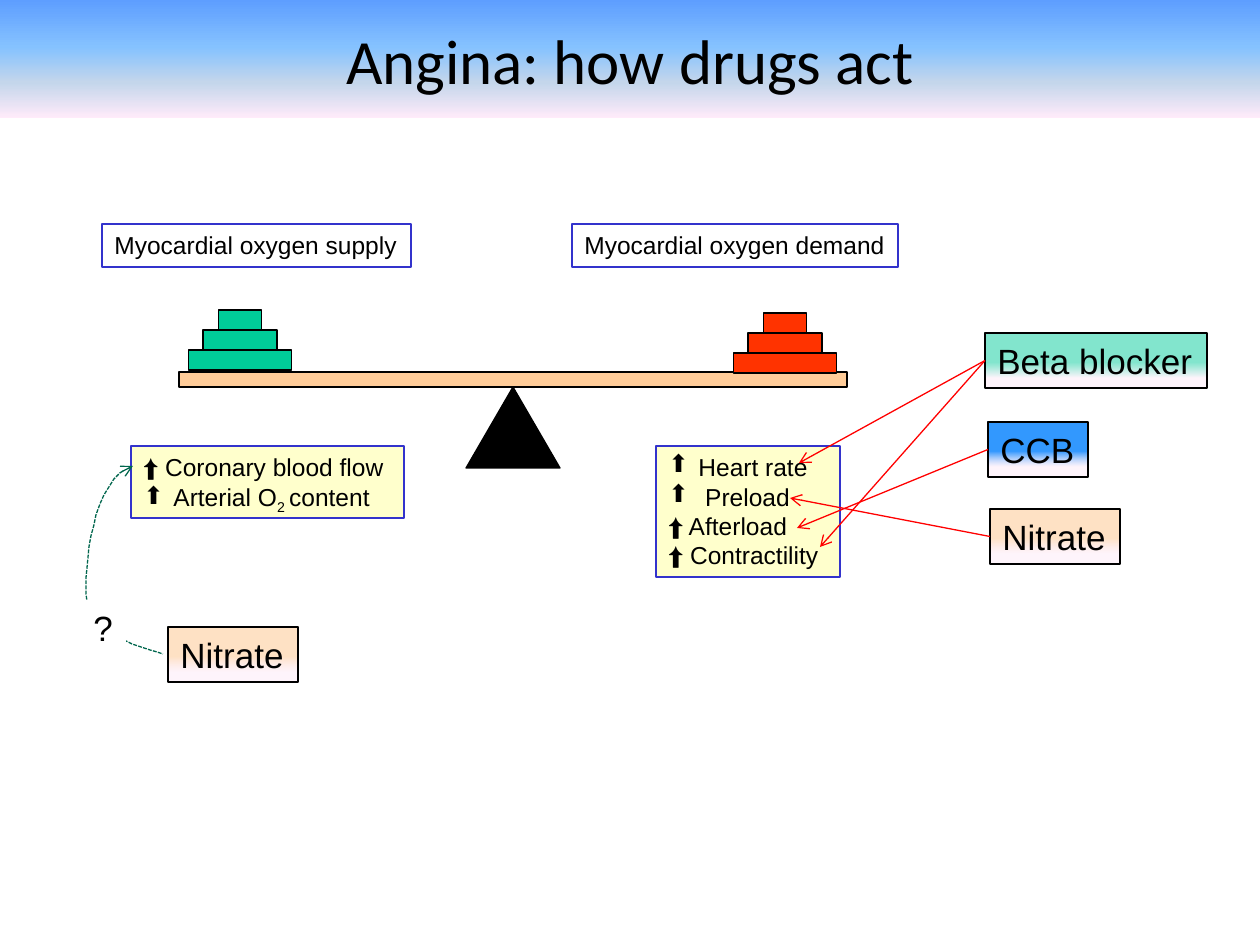
from pptx import Presentation
from pptx.dml.color import RGBColor
from pptx.enum.dml import MSO_LINE
from pptx.enum.shapes import MSO_CONNECTOR, MSO_SHAPE
from pptx.enum.text import MSO_ANCHOR, MSO_AUTO_SIZE, PP_ALIGN
from pptx.oxml.ns import qn
from pptx.util import Pt
from lxml import etree

PX = 914400 / 126
RECT, TRI = MSO_SHAPE.RECTANGLE, MSO_SHAPE.ISOSCELES_TRIANGLE
STRAIGHT, DASH = MSO_CONNECTOR.STRAIGHT, MSO_LINE.SQUARE_DOT
GROW, MIDDLE, CENTER = MSO_AUTO_SIZE.SHAPE_TO_FIT_TEXT, MSO_ANCHOR.MIDDLE, PP_ALIGN.CENTER
LEFT_SIDE = 1

BLACK = RGBColor(0x00, 0x00, 0x00)
WHITE = RGBColor(0xFF, 0xFF, 0xFF)
BLUE = RGBColor(0x33, 0x33, 0xCC)
SKY = RGBColor(0x33, 0x99, 0xFF)
GREEN = RGBColor(0x00, 0xCC, 0x99)
PINE = RGBColor(0x00, 0x66, 0x4D)
RED = RGBColor(0xFF, 0x00, 0x00)
BRICK = RGBColor(0xFF, 0x33, 0x00)
WOOD = RGBColor(0xFF, 0xCC, 0x99)
PEACH = RGBColor(0xFF, 0xE2, 0xC5)
CREAM = RGBColor(0xFF, 0xFF, 0xCC)
PINK = RGBColor(0xFF, 0xEB, 0xFA)
BANNER = [(0, RGBColor(0x5E, 0x9E, 0xFF), 100), (40, RGBColor(0x85, 0xC2, 0xFF), 100),
          (70, RGBColor(0xC4, 0xD6, 0xEB), 100), (100, PINK, 100)]


def emu(*vals):
    return [round(v * PX) for v in vals]


def add(node, tag, **attrs):
    return etree.SubElement(node, qn(tag), attrs)


def fade(tint, alpha=100):
    return [(54, tint, alpha), (82, PINK, 50)]


class Deck:
    def __init__(self, wide, high):
        self.prs = Presentation()
        self.prs.slide_width, self.prs.slide_height = emu(wide, high)
        self.slide = self.prs.slides.add_slide(self.prs.slide_layouts[5])
        self.shapes = self.slide.shapes

    def paint(self, shape, fill, line=None, width=0.75):
        if isinstance(fill, list):
            self.blend(shape, fill)
        elif fill is None:
            shape.fill.background()
        else:
            shape.fill.solid()
            shape.fill.fore_color.rgb = fill
        if line is None:
            shape.line.fill.background()
        else:
            shape.line.color.rgb = line
            shape.line.width = Pt(width)

    def blend(self, shape, stops):
        shape.fill.gradient()
        shape.fill.gradient_angle = 270
        group = next(shape._element.iter(qn("a:gsLst")))
        for old in list(group):
            group.remove(old)
        for pos, tint, alpha in stops:
            stop = add(group, "a:gs", pos=str(pos * 1000))
            color = add(stop, "a:srgbClr", val=str(tint))
            if alpha < 100:
                add(color, "a:alpha", val=str(alpha * 1000))

    def style(self, font, **form):
        font.color.rgb = BLACK
        for key, val in form.items():
            setattr(font, key, val)

    def title(self, text, box):
        shape = self.shapes.title
        for key, val in zip(("left", "top", "width", "height"), emu(*box)):
            setattr(shape, key, val)
        self.paint(shape, BANNER)
        frame = shape.text_frame
        frame.text = text
        frame.vertical_anchor = MIDDLE
        para = frame.paragraphs[0]
        para.alignment = CENTER
        self.style(para.runs[0].font, name="Calibri", size=Pt(36))

    def block(self, kind, box, fill):
        shape = self.shapes.add_shape(kind, *emu(*box))
        shape.shadow.inherit = False
        self.paint(shape, fill, BLACK)

    def pile(self, mid, base, fill):
        for step, wide in enumerate((103, 74, 43)):
            self.block(RECT, (mid - wide / 2, base - 20 * (step + 1), wide, 20), fill)

    def label(self, box, lines, size, fill, line=BLUE, width=0.75):
        """Each line is (bullet or None, list of (text, baseline))."""
        shape = self.shapes.add_textbox(*emu(*box))
        self.paint(shape, fill, line, width)
        frame = shape.text_frame
        frame.word_wrap = False
        frame.auto_size = GROW
        for num, (mark, runs) in enumerate(lines):
            para = frame.add_paragraph() if num else frame.paragraphs[0]
            if mark:
                self.bullet(para, mark)
            for text, base in runs:
                run = para.add_run()
                run.text = text
                self.style(run.font, name="Arial", size=Pt(size))
                if base:
                    run._r.get_or_add_rPr().set("baseline", str(base * 1000))
        return shape

    def bullet(self, para, mark):
        props = para._p.get_or_add_pPr()
        gap = emu(30)[0]
        props.set("marL", str(gap))
        props.set("indent", str(-gap))
        add(props, "a:buChar", char=mark)

    def drug(self, box, name, fill):
        return self.label(box, [(None, [(name, 0)])], 20, fill, BLACK)

    def arrow(self, source, end):
        start = (source.left, source.top + source.height // 2)
        link = self.shapes.add_connector(STRAIGHT, *start, *emu(*end))
        link.begin_connect(source, LEFT_SIDE)
        link.line.color.rgb = RED
        link.line.width = Pt(0.75)
        add(link.line._get_or_add_ln(), "a:tailEnd", type="arrow")
        add(link._element.spPr, "a:effectLst")

    def curve(self, start, parts, steps=16):
        pts, here = [], start
        for one, two, end in parts:
            for num in range(1, steps + 1):
                t = num / steps
                u = 1 - t
                pts.append(tuple(u**3 * a + 3 * u * u * t * b + 3 * u * t * t * c + t**3 * d
                                 for a, b, c, d in zip(here, one, two, end)))
            here = end
        form = self.shapes.build_freeform(*start, scale=PX)
        form.add_line_segments(pts, close=False)
        shape = form.convert_to_shape()
        shape.shadow.inherit = False
        self.paint(shape, None, PINE)
        shape.line.dash_style = DASH
        add(shape.line._get_or_add_ln(), "a:headEnd", type="arrow")


def main():
    deck = Deck(1260, 945)
    deck.title("Angina: how drugs act", (0, 0, 1260, 118))

    # Balance: beam, pivot and weights
    deck.block(RECT, (179, 372, 668, 15), WOOD)
    deck.block(TRI, (466, 387, 94, 81), BLACK)
    deck.pile(240, 370, GREEN)
    deck.pile(785, 373, BRICK)

    # Headings of the two sides
    for left, wide, side in ((102, 309, "supply"), (572, 326, "demand")):
        deck.label((left, 224, wide, 43), [(None, [("Myocardial oxygen " + side, 0)])], 14, WHITE)

    # Factors on each side
    deck.label((131, 446, 273, 72), [
        (None, [("⬆ Coronary blood flow", 0)]),
        ("⬆", [("Arterial O", 0), ("2 ", -25), ("content", 0)]),
    ], 14, CREAM)
    deck.label((656, 446, 184, 131), [
        ("⬆", [("Heart rate", 0)]),
        ("⬆", [(" Preload", 0)]),
        (None, [("⬆ Afterload", 0)]),
        (None, [("⬆ Contractility", 0)]),
    ], 14, CREAM, width=1)

    # Drugs and the factors they act on
    for box, name, fill, ends in (
        ((985, 333, 222, 55), "Beta blocker", fade(GREEN, 49), [(799, 463), (820, 547)]),
        ((988, 422, 100, 55), "CCB", fade(SKY), [(797, 528)]),
        ((990, 509, 130, 55), "Nitrate", fade(PEACH), [(790, 498)]),
    ):
        source = deck.drug(box, name, fill)
        for end in ends:
            deck.arrow(source, end)

    # Uncertain effect of nitrate on supply
    deck.curve((133, 466), [((94, 475), (82, 570), (87, 601)),
                            ((92, 633), (130, 644), (163, 654))])
    deck.drug((168, 627, 130, 55), "Nitrate", fade(PEACH))
    deck.label((81, 600, 45, 55), [(None, [("?", 0)])], 20, WHITE, None)

    deck.prs.save("out.pptx")


if __name__ == "__main__":
    main()
